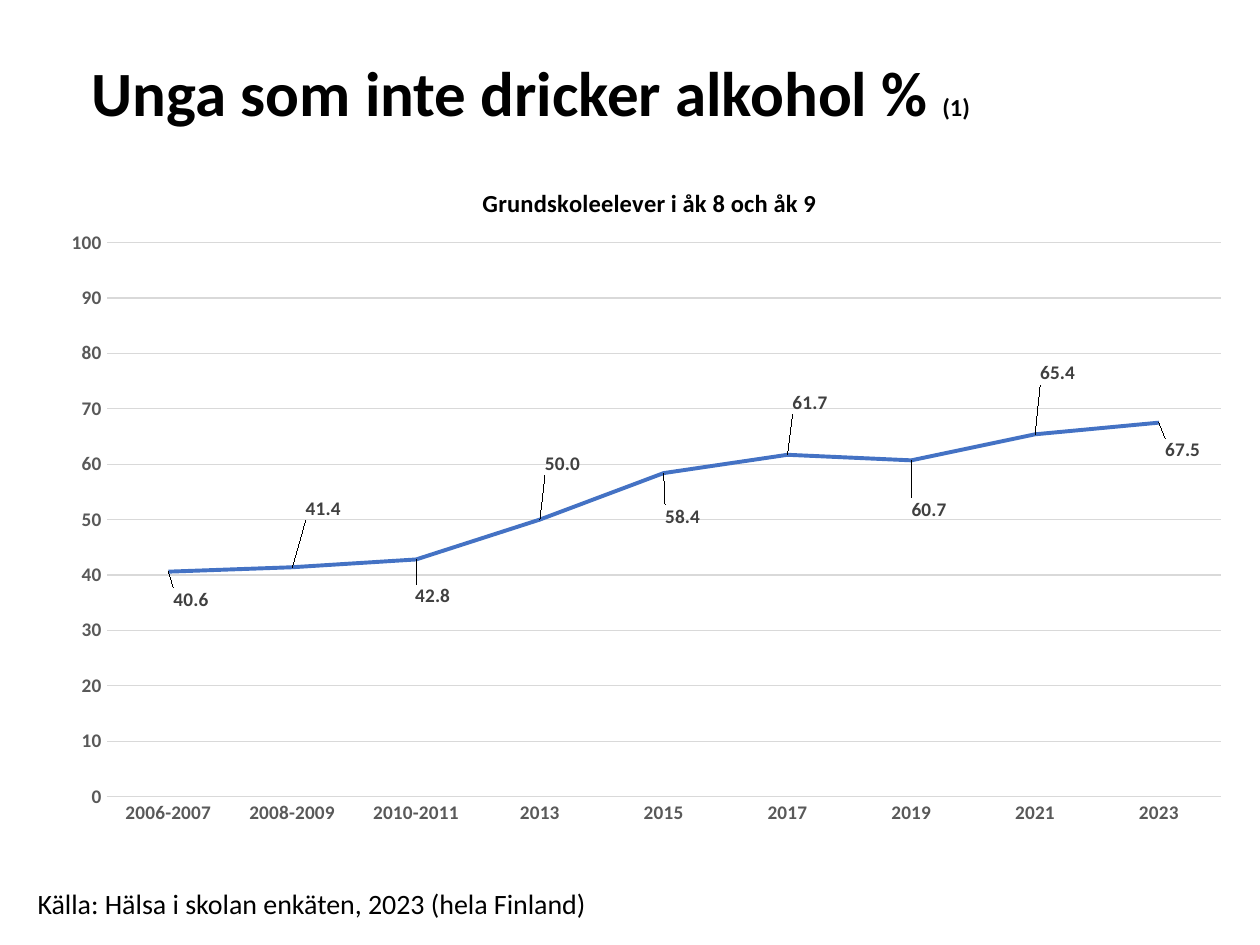
from lxml import etree
from pptx import Presentation
from pptx import util as u
from pptx.chart.data import CategoryChartData
from pptx.dml.color import RGBColor
from pptx.enum import chart as ch, text as tx
from pptx.oxml import parse_xml
from pptx.oxml.ns import nsdecls, qn

FONT = "Calibri"
COLORS = {"text": "000000", "axis": "595959", "grid": "D9D9D9",
          "line": "4472C4", "label": "404040"}
YEARS = ["2006-2007", "2008-2009", "2010-2011", "2013", "2015",
         "2017", "2019", "2021", "2023"]
SHARES = [40.6, 41.4, 42.8, 50, 58.4, 61.7, 60.7, 65.4, 67.5]
# Label shifts from the point's right side, as shares of the chart, in percent
SHIFTS = [(0, 4.1), (0.7, -8.6), (-0.5, 5.4), (0, -8.2), (-0.3, 6.4),
          (0, -7.6), (-0.4, 7.2), (0, -8.9), (0.1, 4)]


def rgb(key):
    return RGBColor.from_string(COLORS[key])


def style(font, size, key, bold=False):
    font.name, font.size, font.bold = FONT, u.Pt(size), bold
    font.color.rgb = rgb(key)


def rule(line, key, width):
    line.color.rgb = rgb(key)
    line.width = u.Pt(width)


def add_text(slide, box, runs, bold=False, wrap=True):
    """Add one paragraph made of (text, size) runs."""
    frame = slide.shapes.add_textbox(*map(u.Inches, box)).text_frame
    frame.word_wrap = wrap
    frame.vertical_anchor = tx.MSO_ANCHOR.TOP
    para = frame.paragraphs[0]
    for words, size in runs:
        run = para.add_run()
        run.text = words
        style(run.font, size, "text", bold)
    return para


def layout(x, y, size=None, edge=True):
    """Return a manual chart layout; lengths are shares of the chart."""
    root = parse_xml(f"<c:layout {nsdecls('c')}><c:manualLayout/></c:layout>")
    items = []
    if size:
        items.append(("layoutTarget", "inner"))
    if edge:
        items += [("xMode", "edge"), ("yMode", "edge")]
    items += [("x", x), ("y", y)]
    if size:
        items += zip("wh", size)
    for tag, val in items:
        etree.SubElement(root[0], qn("c:" + tag)).set("val", str(val))
    return root


def put_layout(node, new, after=None):
    """Replace the layout of a chart part."""
    old = node.find(qn("c:layout"))
    if old is not None:
        node.remove(old)
    if after is None:
        node.insert(0, new)
    else:
        node.find(qn(after)).addnext(new)


def style_axes(chart):
    for axis in (chart.category_axis, chart.value_axis):
        axis.major_tick_mark = axis.minor_tick_mark = ch.XL_TICK_MARK.NONE
        style(axis.tick_labels.font, 11, "axis", True)
    rule(chart.category_axis.format.line, "grid", 0.75)
    axis = chart.value_axis
    axis.minimum_scale, axis.maximum_scale, axis.major_unit = 0, 100, 10
    axis.tick_labels.number_format = "#,##0"
    axis.tick_labels.number_format_is_linked = False
    axis.format.line.fill.background()
    rule(axis.major_gridlines.format.line, "grid", 0.75)


def style_labels(series):
    labels = series.data_labels
    labels.show_value = True
    labels.number_format = "#,##0.0"
    labels.number_format_is_linked = False
    style(labels.font, 11, "label", True)
    for i, (dx, dy) in enumerate(SHIFTS):
        label = series.points[i].data_label
        style(label.font, 11, "label", True)
        label.position = ch.XL_LABEL_POSITION.RIGHT
    # Shift each label and give it the shared number format
    for node, (dx, dy) in zip(series._element.iter(qn("c:dLbl")), SHIFTS):
        put_layout(node, layout(dx / 100, dy / 100, edge=False), "c:idx")
        form = parse_xml(f'<c:numFmt {nsdecls("c")} formatCode="#,##0.0" '
                         'sourceLinked="0"/>')
        node.find(qn("c:layout")).addnext(form)


def add_line(slide, box):
    data = CategoryChartData(number_format="0.0")
    data.categories = YEARS
    data.add_series("Series 1", SHARES)
    chart = slide.shapes.add_chart(ch.XL_CHART_TYPE.LINE,
                                   *map(u.Inches, box), data).chart
    style(chart.font, 10, "text")
    chart.has_legend = False
    # Heading
    chart.has_title = True
    frame = chart.chart_title.text_frame
    frame.text = "Grundskoleelever i åk 8 och åk 9"
    style(frame.paragraphs[0].font, 14, "text", True)
    chart.chart_title.include_in_layout = False
    put_layout(chart.chart_title._element, layout(0.36, 0.04), "c:tx")
    # Plot
    plot = chart.plots[0]
    plot.vary_by_categories = False
    put_layout(plot._element.getparent(), layout(0.05, 0.13, (0.93, 0.81)))
    series = plot.series[0]
    series.smooth = False
    series.marker.style = ch.XL_MARKER_STYLE.NONE
    rule(series.format.line, "line", 2.25)
    style_axes(chart)
    style_labels(series)


def main():
    prs = Presentation()
    prs.slide_width, prs.slide_height = u.Inches(10), u.Inches(7.5)
    slide = prs.slides.add_slide(prs.slide_layouts[6])
    # Title
    title = add_text(slide, (0.63, 0.44, 9.13, 1.13),
                     [("Unga som inte dricker alkohol % ", 36), ("(1)", 14)],
                     bold=True)
    title.line_spacing = 0.9
    # Source
    add_text(slide, (0.2, 6.99, 4.8, 0.37),
             [("Källa: Hälsa i skolan enkäten, 2023 (hela Finland)", 16)],
             wrap=False)
    # Chart
    add_line(slide, (0.37, 1.22, 9.51, 5.43))
    prs.save("out.pptx")


if __name__ == "__main__":
    main()
